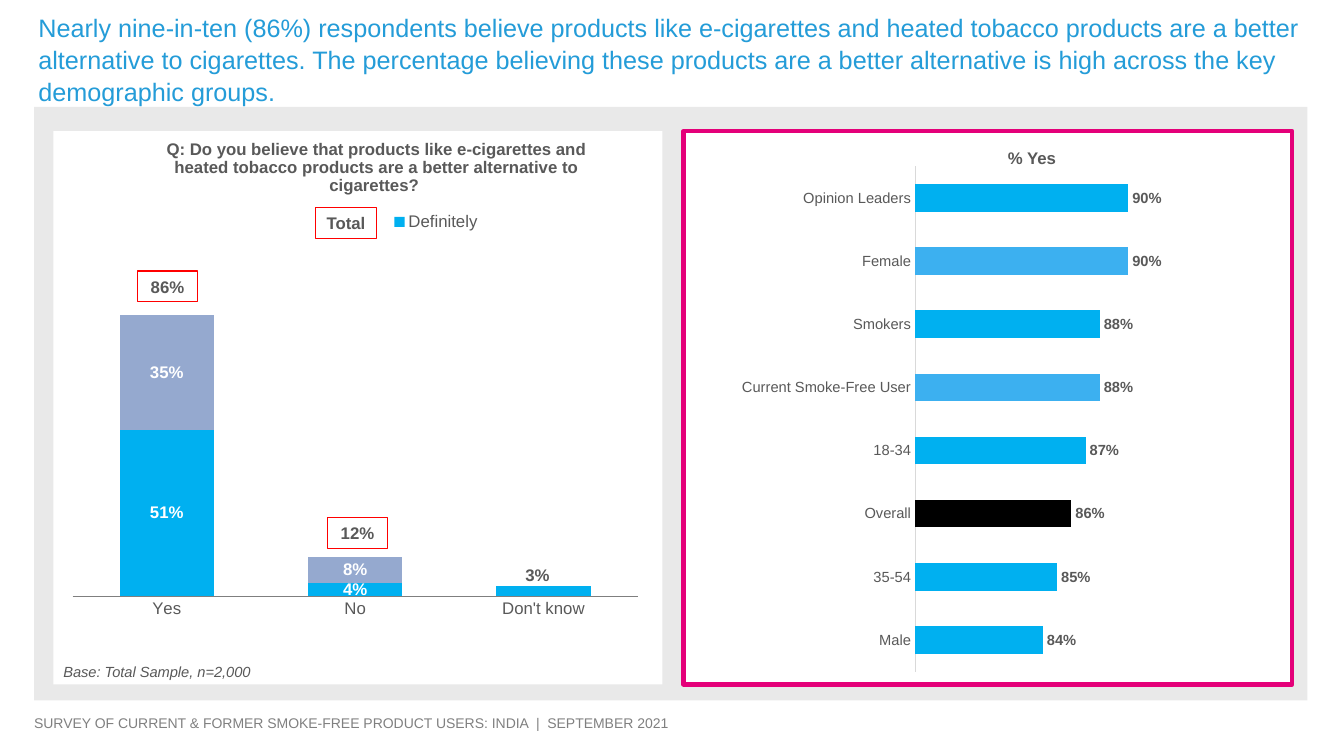
from dataclasses import dataclass

from lxml import etree
from pptx import Presentation
from pptx.chart.data import CategoryChartData
from pptx.dml.color import RGBColor
from pptx.enum import chart as ch, shapes, text
from pptx.oxml import ns
from pptx.util import Pt


@dataclass(frozen=True)
class Theme:
    font: str = "Arial"
    title: str = "249CD8"
    body: str = "595959"
    footer: str = "808080"
    band: str = "E9E9E9"
    white: str = "FFFFFF"
    black: str = "000000"
    cyan: str = "00B0F0"
    sky: str = "3CB0F0"
    lavender: str = "95A9CF"
    frame: str = "E40079"
    callout: str = "FF0000"
    axis: str = "7F7F7F"
    pale_axis: str = "D9D9D9"
    title_size: float = 18
    label_size: float = 12
    small_size: float = 10.5
    footer_size: float = 10


T = Theme()


def rgb(value):
    return RGBColor.from_string(value)


def style_font(font, size, color, bold=False, italic=False):
    font.name, font.size = T.font, Pt(size)
    font.bold, font.italic = bold, italic
    font.color.rgb = rgb(color)


def add_run(p, words, *style, **flags):
    r = p.add_run()
    r.text = words
    style_font(r.font, *style, **flags)


def add_box(s, box, fill=None, line=None, width=0.75):
    sp = s.shapes.add_shape(shapes.MSO_SHAPE.RECTANGLE, *map(Pt, box))
    sp.shadow.inherit = False
    if fill:
        sp.fill.solid()
        sp.fill.fore_color.rgb = rgb(fill)
    else:
        sp.fill.background()
    if line:
        sp.line.color.rgb = rgb(line)
        sp.line.width = Pt(width)
    else:
        sp.line.fill.background()
    return sp


def add_label(s, box, words, *style, **flags):
    tf = s.shapes.add_textbox(*map(Pt, box)).text_frame
    tf.word_wrap = True
    add_run(tf.paragraphs[0], words, *style, **flags)


def add_callout(s, left, top, words):
    tf = add_box(s, (left, top, 43.5, 22), line=T.callout).text_frame
    tf.word_wrap = False
    tf.vertical_anchor = text.MSO_ANCHOR.MIDDLE
    p = tf.paragraphs[0]
    p.alignment = text.PP_ALIGN.CENTER
    add_run(p, words, T.label_size, T.body, bold=True)


def place(parent, index, inner=False, **fractions):
    """Give a chart part a manual layout, as fractions of the chart."""
    for old in parent.findall(ns.qn("c:layout")):
        parent.remove(old)
    layout = etree.Element(ns.qn("c:layout"))
    manual = etree.SubElement(layout, ns.qn("c:manualLayout"))
    if inner:
        etree.SubElement(manual, ns.qn("c:layoutTarget"), val="inner")
    if "w" in fractions or parent.tag == ns.qn("c:title"):
        for mode in ("xMode", "yMode"):
            etree.SubElement(manual, ns.qn("c:" + mode), val="edge")
    for key, value in fractions.items():
        etree.SubElement(manual, ns.qn("c:" + key), val=str(value))
    parent.insert(index, layout)


def add_percent_chart(s, box, kind, cats, series, low, gap, axis_color, axis_size):
    data = CategoryChartData(number_format="0%")
    data.categories = cats
    for name, values in series:
        data.add_series(name, values)
    chart = s.shapes.add_chart(kind, *map(Pt, box), data).chart
    style_font(chart.font, T.label_size, T.body)
    chart.has_title = chart.has_legend = False
    values_axis, cat_axis = chart.value_axis, chart.category_axis
    values_axis.minimum_scale, values_axis.maximum_scale = low, 1
    values_axis.has_major_gridlines = False
    values_axis.visible = False
    cat_axis.major_tick_mark = ch.XL_TICK_MARK.NONE
    cat_axis.format.line.color.rgb = rgb(axis_color)
    cat_axis.format.line.width = Pt(0.75)
    style_font(cat_axis.tick_labels.font, axis_size, T.body)
    plot = chart.plots[0]
    plot.vary_by_categories = False
    plot.gap_width = gap
    return chart


def style_series(series, fill, size, color, position):
    series.format.fill.solid()
    series.format.fill.fore_color.rgb = rgb(fill)
    labels = series.data_labels
    labels.show_value = True
    labels.number_format, labels.number_format_is_linked = "0%", False
    labels.position = position
    style_font(labels.font, size, color, bold=True)


def add_heading(s, box):
    sp = s.shapes.title
    sp.left, sp.top, sp.width, sp.height = map(Pt, box)
    tf = sp.text_frame
    tf.word_wrap = True
    tf.auto_size = text.MSO_AUTO_SIZE.NONE
    tf.vertical_anchor = text.MSO_ANCHOR.TOP
    p = tf.paragraphs[0]
    p.alignment = text.PP_ALIGN.LEFT
    p.line_spacing = 1.05
    add_run(p, "Nearly nine-in-ten (86%) respondents believe products like e-cigarettes and "
            "heated tobacco products are a better alternative to cigarettes. The percentage "
            "believing these products are a better alternative is high across the key "
            "demographic groups.", T.title_size, T.title)


def add_answers_panel(s, box):
    x, y, w, h = box
    add_box(s, box, fill=T.white)
    add_label(s, (x, y + 376, 335, 21), "Base: Total Sample, n=2,000",
              T.small_size, T.body, italic=True)

    # Stacked answers
    chart = add_percent_chart(
        s, (x + 0.7, y, 432.7, 360.7), ch.XL_CHART_TYPE.COLUMN_STACKED,
        ("Yes", "No", "Don't know"),
        (("Definitely", (0.51, 0.04, 0.03)), ("Series 2", (0.35, 0.08, None))),
        0, 100, T.axis, T.label_size)
    plot = chart.plots[0]
    plot.overlap = 100
    for series, fill in zip(plot.series, (T.cyan, T.lavender)):
        style_series(series, fill, T.label_size, T.white, ch.XL_LABEL_POSITION.CENTER)
    place(chart._chartSpace.chart.plotArea, 0, inner=True, x=0.03, y=0.275, w=0.933, h=0.646)

    # Label of the short bar sits above it
    label = plot.series[0].points[2].data_label
    style_font(label.font, T.label_size, T.body, bold=True)
    label.position = ch.XL_LABEL_POSITION.CENTER
    place(plot.series[0].data_labels._element.find(ns.qn("c:dLbl")), 1, x=-0.01, y=-0.03)

    # Question and legend
    chart.has_title = True
    add_run(chart.chart_title.text_frame.paragraphs[0],
            "Q: Do you believe that products like e-cigarettes and heated tobacco products "
            "are a better alternative to cigarettes? ", T.label_size, T.body, bold=True)
    place(chart.chart_title._element, 1, x=0.18, y=0.01)
    chart.has_legend = True
    legend = chart.legend
    legend.position = ch.XL_LEGEND_POSITION.TOP
    legend.include_in_layout = False
    style_font(legend.font, T.label_size, T.body)
    entry = etree.Element(ns.qn("c:legendEntry"))
    etree.SubElement(entry, ns.qn("c:idx"), val="1")
    etree.SubElement(entry, ns.qn("c:delete"), val="1")
    legend._element.insert(1, entry)
    place(legend._element, 2, x=0.55, y=0.15, w=0.16, h=0.06)


def add_totals(s, box):
    x, y, w, h = box
    for dx, dy, words in ((187.2, 54.7, "Total"), (59.7, 100, "86%"), (195.4, 276.3, "12%")):
        add_callout(s, x + dx, y + dy, words)


def add_groups_panel(s, box):
    x, y, w, h = box
    add_box(s, box, fill=T.white, line=T.frame, width=3)
    groups = {"Male": 0.84, "35-54": 0.85, "Overall": 0.86, "18-34": 0.87,
              "Current Smoke-Free User": 0.88, "Smokers": 0.88, "Female": 0.9,
              "Opinion Leaders": 0.9}
    chart = add_percent_chart(
        s, (x + 2, y, 433.5, h), ch.XL_CHART_TYPE.BAR_CLUSTERED, list(groups),
        (("Series 1", list(groups.values())),), 0.75, 130, T.pale_axis, T.small_size)
    series = chart.plots[0].series[0]
    style_series(series, T.cyan, T.small_size, T.body, ch.XL_LABEL_POSITION.OUTSIDE_END)
    for i, fill in ((2, T.black), (4, T.sky), (6, T.sky)):
        point = series.points[i].format.fill
        point.solid()
        point.fore_color.rgb = rgb(fill)
    place(chart._chartSpace.chart.plotArea, 0, inner=True, x=0.377, y=0.064, w=0.586, h=0.913)
    add_label(s, (x + 224.6, y + 8.6, 75.6, 21.6), "% Yes", T.label_size, T.body, bold=True)


def build_survey_slide(prs):
    s = prs.slides.add_slide(prs.slide_layouts[5])
    # Background band and footer
    add_box(s, (24.5, 76.3, 909.4, 424), fill=T.band)
    add_label(s, (17.3, 506.9, 895, 19.4),
              "SURVEY OF CURRENT & FORMER SMOKE-FREE PRODUCT USERS: INDIA  |  SEPTEMBER 2021",
              T.footer_size, T.footer)
    # Two equal panels
    left, right = ((x, 93.6, 434.9, 395.3) for x in (38.2, 488.2))
    add_answers_panel(s, left)
    add_groups_panel(s, right)
    add_heading(s, (20.2, 4.3, 919.4, 72.7))
    add_totals(s, left)


def main():
    prs = Presentation()
    prs.slide_width, prs.slide_height = Pt(960), Pt(540)
    build_survey_slide(prs)
    prs.save("out.pptx")


if __name__ == "__main__":
    main()
